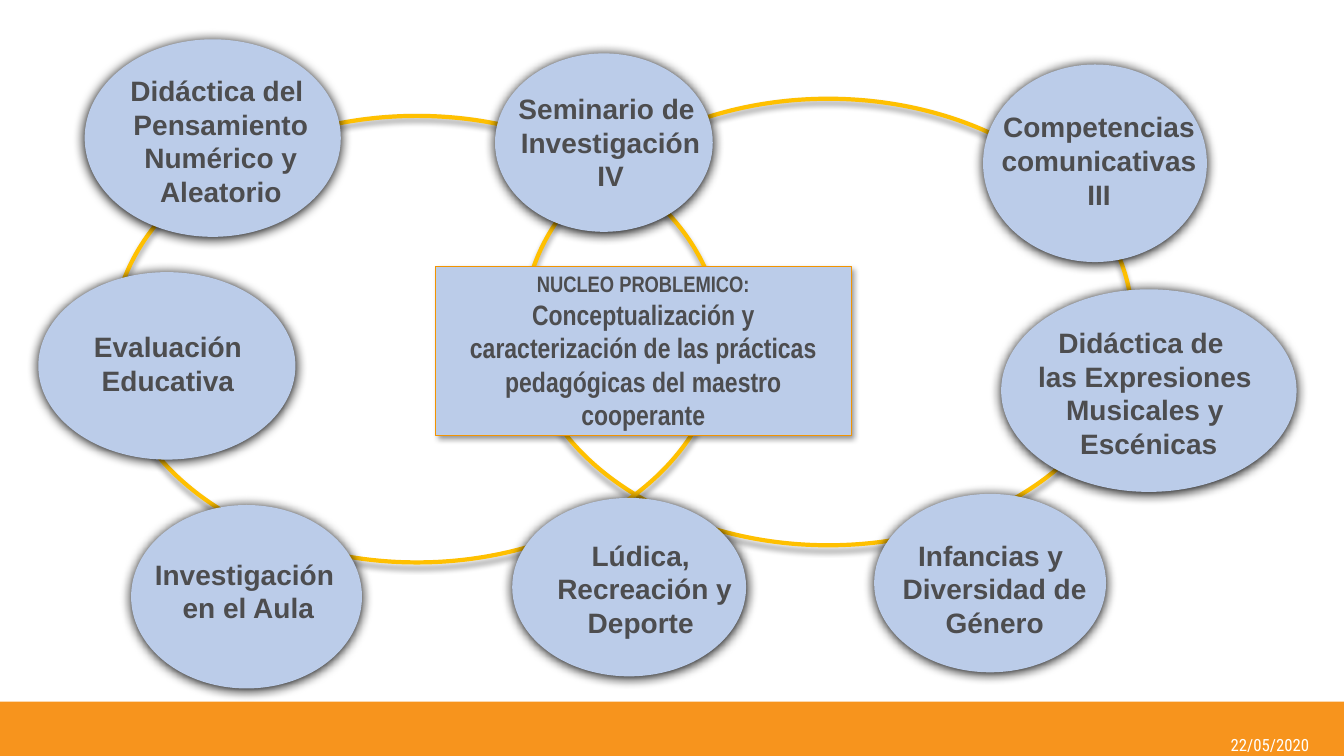
from lxml.etree import SubElement
from pptx import Presentation
from pptx.dml.color import RGBColor
from pptx.enum.shapes import MSO_SHAPE
from pptx.enum.text import MSO_ANCHOR, PP_ALIGN
from pptx.oxml.ns import qn
from pptx.util import Inches, Pt

ORANGE = RGBColor(0xF7, 0x94, 0x1D)
BORDER = RGBColor(0xF2, 0x94, 0x00)
GOLD = RGBColor(0xFF, 0xC0, 0x00)
BLUE = RGBColor(0xBB, 0xCC, 0xE9)
GRAY = RGBColor(0x4D, 0x4D, 0x4F)
WHITE = RGBColor(0xFF, 0xFF, 0xFF)

RINGS = [(5.2, 0.98, 6.03, 4.43), (1.12, 1.15, 6.03, 4.43)]

COURSES = [
    ((0.84, 0.39, 2.54, 1.96), (1.05, 0.68, 2.28, 1.58),
     ["Didáctica del ", "Pensamiento", " Numérico y ", "Aleatorio"]),
    ((0.38, 2.7, 2.55, 1.86), (0.67, 3.22, 2.07, 0.77),
     ["Evaluación ", "Educativa "]),
    ((9.75, 0.64, 2.22, 1.96), (9.75, 1.04, 2.3, 1.35),
     ["Competencias comunicativas", "III"]),
    ((9.93, 2.87, 2.93, 2.01), (10.16, 3.18, 2.39, 1.31),
     ["Didáctica de ", "las Expresiones ", "Musicales y", " Escénicas"]),
    ((1.3, 5.01, 2.29, 1.82), (1.42, 5.48, 2.01, 0.77),
     ["Investigación", " en el Aula"]),
    ((4.91, 0.53, 2.16, 1.77), (5.01, 0.86, 2.09, 1.12),
     ["Seminario de ", "Investigación IV"]),
    ((8.67, 4.9, 2.3, 1.77), (8.64, 5.29, 2.45, 1.24),
     ["Infancias y ", "Diversidad de Género"]),
    ((5.08, 4.94, 2.32, 1.77), (5.23, 5.29, 2.25, 1.11),
     ["Lúdica,", " Recreación y Deporte"]),
]


def add_shadow(shape, opacity, blur, distance, angle):
    effects = shape._element.spPr.find(qn("a:effectLst"))
    shadow = SubElement(effects, qn("a:outerShdw"), blurRad=str(Pt(blur)),
                        dist=str(Pt(distance)), dir=str(angle * 60000),
                        algn="ctr", rotWithShape="0")
    color = SubElement(shadow, qn("a:srgbClr"), val="000000")
    SubElement(color, qn("a:alpha"), val=str(opacity * 1000))


def add_figure(slide, kind, box, fill=None, line=None, width=0, shadow=None):
    shape = slide.shapes.add_shape(kind, *map(Inches, box))
    if fill is None:
        shape.fill.background()
    else:
        shape.fill.solid()
        shape.fill.fore_color.rgb = fill
    if line is None:
        shape.line.fill.background()
    else:
        shape.line.color.rgb = line
        shape.line.width = Pt(width)
    shape.shadow.inherit = False
    if shadow:
        add_shadow(shape, *shadow)
    return shape


def write_lines(shape, lines, font, color, bold=True, anchor=MSO_ANCHOR.TOP):
    frame = shape.text_frame
    frame.word_wrap = True
    frame.vertical_anchor = anchor
    for index, (text, size) in enumerate(lines):
        paragraph = frame.add_paragraph() if index else frame.paragraphs[0]
        paragraph.alignment = PP_ALIGN.CENTER
        run = paragraph.add_run()
        run.text = text
        run.font.name = font
        run.font.size = Pt(size)
        run.font.bold = bold
        run.font.color.rgb = color


def add_label(slide, box, lines, *style, **options):
    label = slide.shapes.add_textbox(*map(Inches, box))
    write_lines(label, lines, *style, **options)


def add_course(slide, oval, label, lines):
    add_figure(slide, MSO_SHAPE.OVAL, oval, BLUE, shadow=(100, 8.5, 1, 90))
    add_label(slide, label, [(line, 20) for line in lines], "Arial", GRAY)


def add_core_problem(slide):
    core = add_figure(slide, MSO_SHAPE.RECTANGLE, (4.32, 2.64, 4.12, 1.68),
                      BLUE, BORDER, 0.5, (40, 4, 3, 45))
    lines = [("NUCLEO PROBLEMICO:", 16),
             ("Conceptualización y caracterización de las prácticas "
              "pedagógicas del maestro cooperante", 20)]
    write_lines(core, lines, "Arial Narrow", GRAY, anchor=MSO_ANCHOR.MIDDLE)


def add_footer(slide):
    add_figure(slide, MSO_SHAPE.RECTANGLE, (0, 6.96, 13.33, 0.56), ORANGE)
    add_label(slide, (11.89, 7.28, 1.41, 0.21), [("22/05/2020", 12)],
              "Roboto Condensed", WHITE, bold=False, anchor=MSO_ANCHOR.MIDDLE)


def main():
    presentation = Presentation()
    presentation.slide_width = Inches(13.33)
    presentation.slide_height = Inches(7.5)
    slide = presentation.slides.add_slide(presentation.slide_layouts[6])
    add_footer(slide)
    for ring in RINGS:
        add_figure(slide, MSO_SHAPE.OVAL, ring, line=GOLD, width=3,
                   shadow=(40, 4, 3, 90))
    for course in COURSES:
        add_course(slide, *course)
    add_core_problem(slide)
    presentation.save("out.pptx")


if __name__ == "__main__":
    main()
